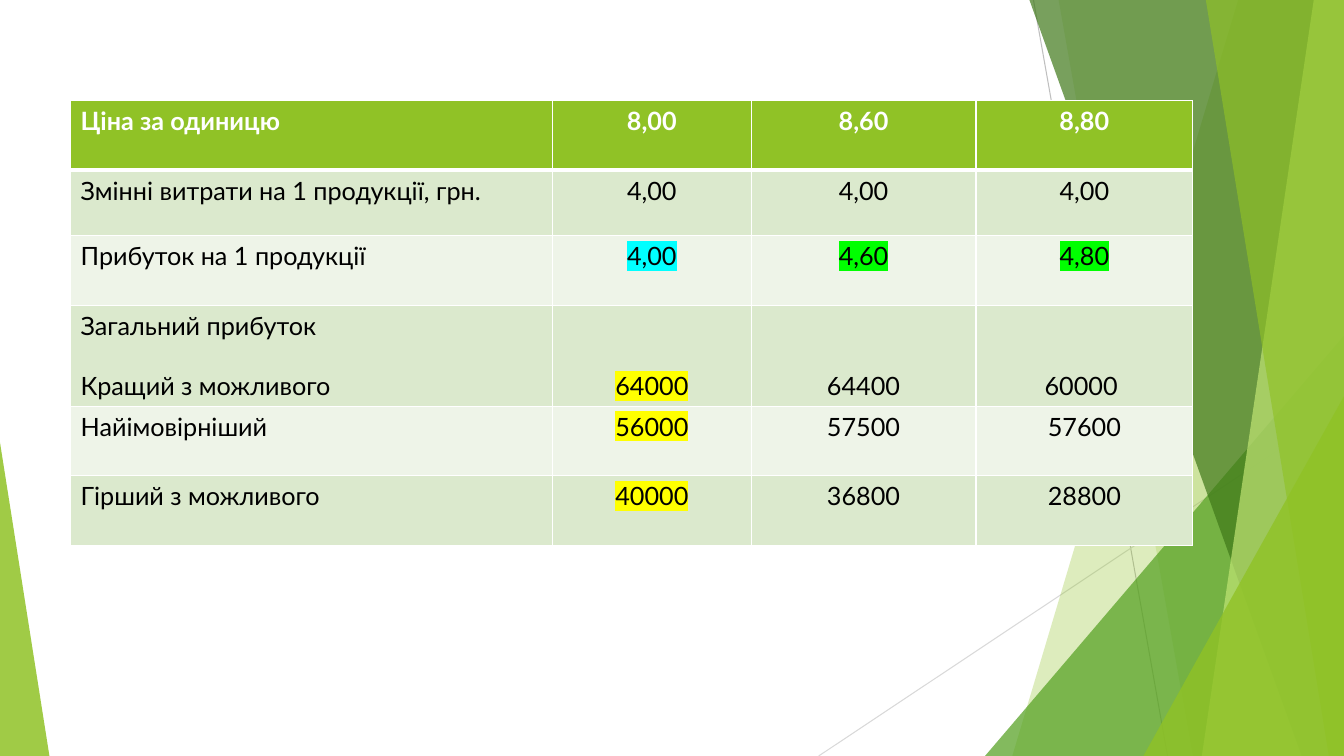
import dataclasses
import typing

import lxml.etree
import pptx
import pptx.dml.color
import pptx.enum.shapes
import pptx.enum.text
import pptx.oxml.ns
import pptx.util

Inches = pptx.util.Inches
qn = pptx.oxml.ns.qn
Point = tuple[float, float]


@dataclasses.dataclass(frozen=True)
class Theme:
    font: str = "Lato"
    size: float = 18
    gap: float = 21.6
    lime: str = "90C226"
    leaf: str = "54A021"
    moss: str = "3F7819"
    pale: str = "C0E474"
    white: str = "FFFFFF"
    black: str = "000000"
    bands: tuple[str, str] = ("DBE9CD", "EEF4E8")
    cyan: str = "00FFFF"
    green: str = "00FF00"
    yellow: str = "FFFF00"
    thin: float = 1
    thick: float = 3
    hair: float = 0.75


THEME = Theme()


@dataclasses.dataclass(frozen=True)
class Ray:
    start: Point
    end: Point
    color: str


@dataclasses.dataclass(frozen=True)
class Panel:
    points: tuple[Point, ...]
    color: str
    alpha: int


@dataclasses.dataclass(frozen=True)
class Wedge:
    left: float
    top: float
    width: float
    height: float
    tip: float
    color: str
    alpha: int


@dataclasses.dataclass(frozen=True)
class Row:
    height: float
    label: tuple[str, ...]
    values: tuple[str, str, str]
    marks: tuple[str, str, str] = ("", "", "")


WIDE, HIGH = 13.33, 7.5


def band(top: float, foot: float, color: str, alpha: int) -> Panel:
    return Panel(((top, 0), (WIDE, 0), (WIDE, HIGH), (foot, HIGH)), color, alpha)


RAYS = (
    Ray((10.25, 0), (11.58, HIGH), "BFBFBF"),
    Ray((WIDE, 4.03), (8.12, HIGH), "D9D9D9"),
)
DECOR: tuple[Panel | Wedge, ...] = (
    band(12.28, 10.04, THEME.lime, 30),
    band(10.5, 11.83, THEME.lime, 20),
    Wedge(9.77, 3.33, 3.56, 4.17, 1, THEME.leaf, 72),
    band(10.21, 12.91, THEME.moss, 70),
    band(13.03, 11.92, THEME.pale, 70),
    band(11.96, 13.18, THEME.lime, 65),
    Wedge(11.34, 3.93, 1.99, 3.57, 1, THEME.lime, 80),
    Wedge(0, 4.39, 0.49, 3.11, 0, THEME.lime, 85),
)
COLS = (4.78, 1.97, 2.23, 2.15)
BEST = (THEME.yellow, "", "")
ROWS = (
    Row(0.69, ("Ціна за одиницю",), ("8,00", "8,60", "8,80")),
    Row(0.65, ("Змінні витрати на 1 продукції, грн.",), ("4,00", "4,00", "4,00")),
    Row(0.69, ("Прибуток на 1 продукції",), ("4,00", "4,60", "4,80"),
        (THEME.cyan, THEME.green, THEME.green)),
    Row(1, ("Загальний прибуток", "Кращий з можливого"),
        ("64000", "64400", "60000 "), BEST),
    Row(0.69, ("Найімовірніший",), ("56000", "57500", "57600"), BEST),
    Row(0.69, ("Гірший з можливого",), ("40000", "36800", "28800"), BEST),
)


def tint(code: str) -> pptx.dml.color.RGBColor:
    return pptx.dml.color.RGBColor.from_string(code)


def draw_ray(slide: typing.Any, ray: Ray) -> None:
    line = slide.shapes.add_connector(
        pptx.enum.shapes.MSO_CONNECTOR.STRAIGHT,
        *(Inches(n) for n in ray.start + ray.end))
    line.line.color.rgb = tint(ray.color)
    line.line.width = pptx.util.Pt(THEME.hair)
    lxml.etree.SubElement(line._element.spPr, qn("a:effectLst"))


def draw_decor(slide: typing.Any, item: Panel | Wedge) -> None:
    if isinstance(item, Panel):
        spots = [(Inches(x), Inches(y)) for x, y in item.points]
        pen = slide.shapes.build_freeform(*spots[0])
        pen.add_line_segments(spots[1:], close=True)
        shape = pen.convert_to_shape()
    else:
        box = (item.left, item.top, item.width, item.height)
        shape = slide.shapes.add_shape(
            pptx.enum.shapes.MSO_SHAPE.ISOSCELES_TRIANGLE, *map(Inches, box))
        shape.adjustments[0] = item.tip
    shape.shadow.inherit = False
    shape.line.fill.background()
    shape.fill.solid()
    shape.fill.fore_color.rgb = tint(item.color)
    color = shape._element.spPr.find(qn("a:solidFill")).find(qn("a:srgbClr"))
    lxml.etree.SubElement(color, qn("a:alpha"), val=str(item.alpha * 1000))


def add_edge(cell: typing.Any, side: str, width: float) -> None:
    props = cell._tc.get_or_add_tcPr()
    edge = lxml.etree.SubElement(
        props, qn(f"a:ln{side}"), w=str(pptx.util.Pt(width)))
    fill = lxml.etree.SubElement(edge, qn("a:solidFill"))
    lxml.etree.SubElement(fill, qn("a:srgbClr"), val=THEME.white)


def add_text(para: typing.Any, text: str, head: bool, mark: str) -> None:
    run = para.add_run()
    run.text = text
    font = run.font
    font.size = pptx.util.Pt(THEME.size)
    font.bold = head
    font.color.rgb = tint(THEME.white if head else THEME.black)
    if mark:
        light = lxml.etree.SubElement(font._element, qn("a:highlight"))
        lxml.etree.SubElement(light, qn("a:srgbClr"), val=mark)
    font.name = THEME.font


def fill_cell(cell: typing.Any, index: int, lines: tuple[str, ...],
              mark: str, value: bool) -> None:
    head = index == 0
    for side in "LRTB":
        rule = (index, side) in ((0, "B"), (1, "T"))
        add_edge(cell, side, THEME.thick if rule else THEME.thin)
    cell.fill.solid()
    cell.fill.fore_color.rgb = tint(
        THEME.lime if head else THEME.bands[(index - 1) % 2])
    frame = cell.text_frame
    for order, text in enumerate(lines):
        para = frame.add_paragraph() if order else frame.paragraphs[0]
        if order:
            para.space_before = pptx.util.Pt(THEME.gap)
        if value:
            para.alignment = pptx.enum.text.PP_ALIGN.CENTER
        add_text(para, text, head, mark)


def draw_table(slide: typing.Any) -> None:
    size = (0.7, 1, sum(COLS), sum(row.height for row in ROWS))
    table = slide.shapes.add_table(
        len(ROWS), len(COLS), *map(Inches, size)).table
    table.horz_banding = False
    for col, width in zip(table.columns, COLS):
        col.width = Inches(width)
    for index, row in enumerate(ROWS):
        table.rows[index].height = Inches(row.height)
        fill_cell(table.cell(index, 0), index, row.label, "", False)
        for col, (text, mark) in enumerate(zip(row.values, row.marks), 1):
            cell = table.cell(index, col)
            fill_cell(cell, index, (text,), mark, True)
            if len(row.label) > 1:
                cell.vertical_anchor = pptx.enum.text.MSO_ANCHOR.BOTTOM


def main() -> None:
    deck = pptx.Presentation()
    deck.slide_width, deck.slide_height = Inches(WIDE), Inches(HIGH)
    slide = deck.slides.add_slide(deck.slide_layouts[6])
    for ray in RAYS:
        draw_ray(slide, ray)
    for item in DECOR:
        draw_decor(slide, item)
    draw_table(slide)
    deck.save("out.pptx")


if __name__ == "__main__":
    main()
